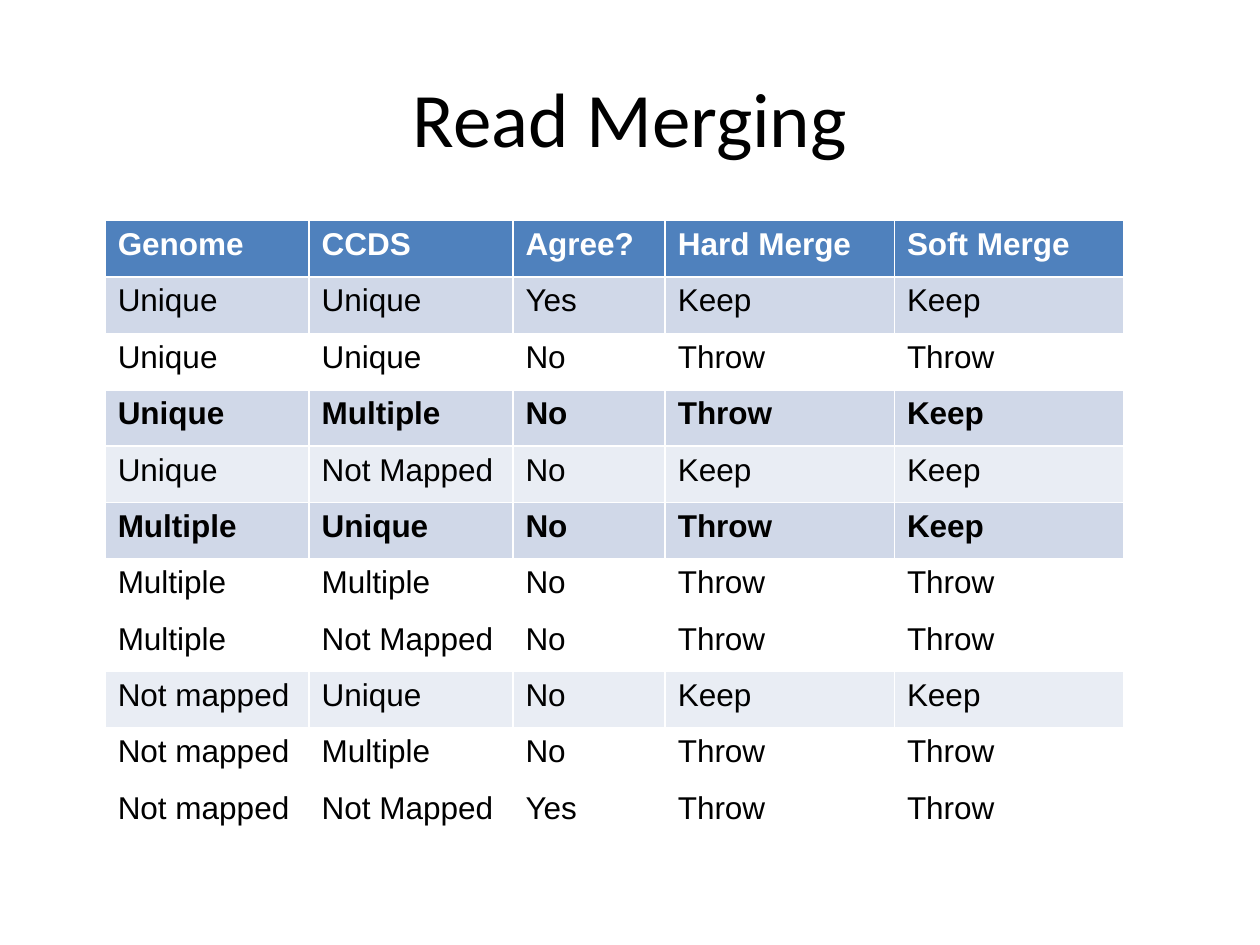
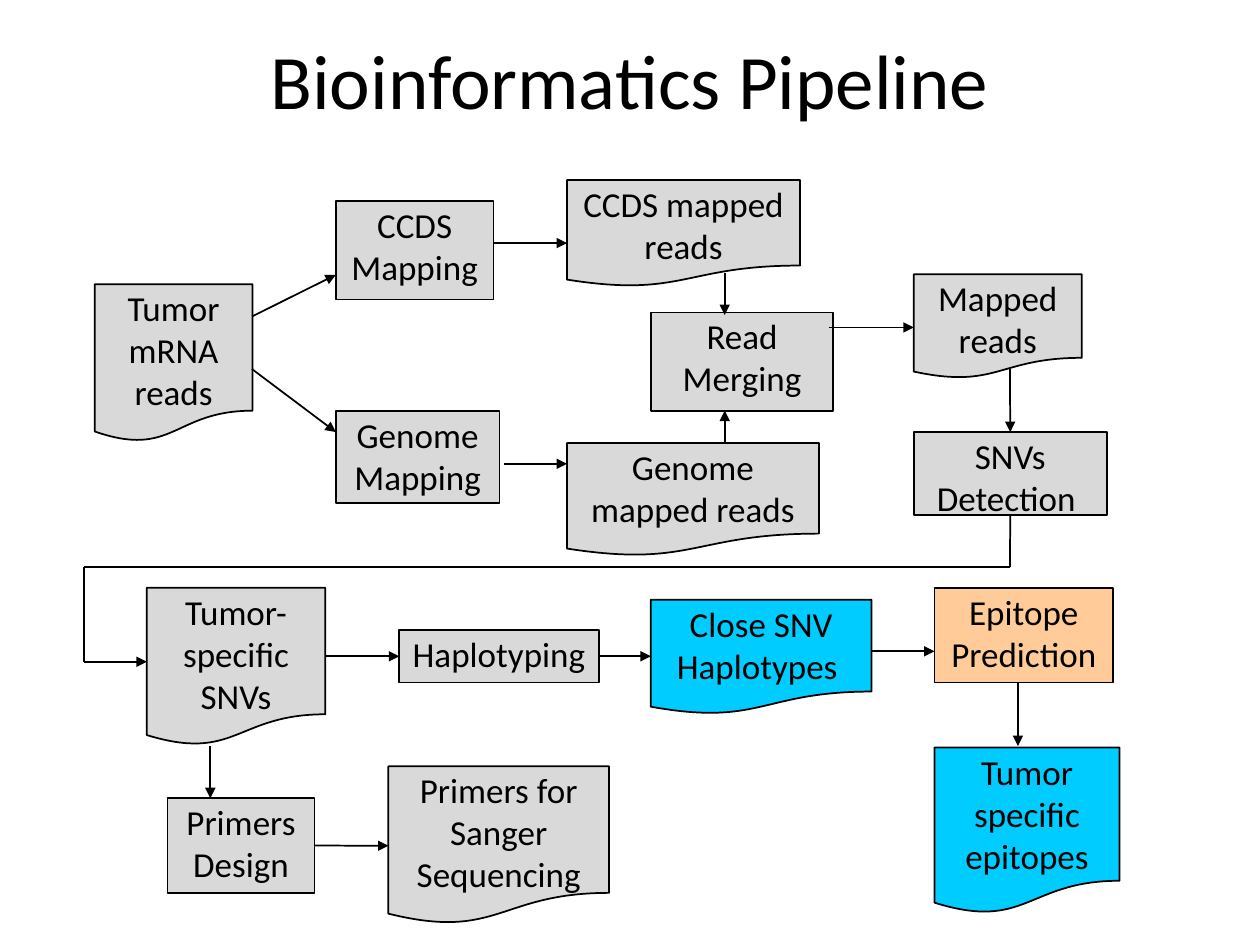
from lxml import etree
from pptx import Presentation
from pptx.dml.color import RGBColor
from pptx.enum.shapes import MSO_CONNECTOR, MSO_SHAPE
from pptx.enum.text import MSO_ANCHOR, PP_ALIGN
from pptx.oxml.ns import qn
from pptx.util import Cm, Pt

COLORS = {
    "text": "000000", "white": "FFFFFF", "header": "4F81BD",
    "band": "D0D8E8", "light": "E9EDF4",
    "step": "D9D9D9", "result": "00CCFF", "prediction": "FFCC99",
}
TITLE_FONT = "Calibri"
TABLE_FONT = "Arial"


def style_paragraph(paragraph, font, size, color="text", bold=False):
    paragraph.font.name = font
    paragraph.font.size = Pt(size)
    paragraph.font.bold = bold
    paragraph.font.color.rgb = RGBColor.from_string(COLORS[color])


def add_titled_slide(title, top):
    slide = prs.slides.add_slide(prs.slide_layouts[6])
    heading = slide.shapes.add_textbox(Cm(1.27), Cm(top), Cm(22.86), Cm(3.18)).text_frame
    heading.word_wrap = True
    heading.vertical_anchor = MSO_ANCHOR.MIDDLE
    heading.text = title
    heading.paragraphs[0].alignment = PP_ALIGN.CENTER
    style_paragraph(heading.paragraphs[0], TITLE_FONT, 44)
    return slide


prs = Presentation()
prs.slide_width, prs.slide_height = Cm(25.4), Cm(19.05)

# Slide 1: merge rules, each row with its fill and whether it is bold
merging = add_titled_slide("Read Merging", 0.76)
rules = [
    ("header", True, ["Genome", "CCDS", "Agree?", "Hard Merge", "Soft Merge"]),
    ("band", False, ["Unique", "Unique", "Yes", "Keep", "Keep"]),
    ("white", False, ["Unique", "Unique", "No", "Throw", "Throw"]),
    ("band", True, ["Unique", "Multiple", "No", "Throw", "Keep"]),
    ("light", False, ["Unique", "Not Mapped", "No", "Keep", "Keep"]),
    ("band", True, ["Multiple", "Unique", "No", "Throw", "Keep"]),
    ("white", False, ["Multiple", "Multiple", "No", "Throw", "Throw"]),
    ("white", False, ["Multiple", "Not Mapped", "No", "Throw", "Throw"]),
    ("light", False, ["Not mapped", "Unique", "No", "Keep", "Keep"]),
    ("white", False, ["Not mapped", "Multiple", "No", "Throw", "Throw"]),
    ("white", False, ["Not mapped", "Not Mapped", "Yes", "Throw", "Throw"]),
]
widths = [4.11, 4.11, 3.07, 4.62, 4.62]
rule_table = merging.shapes.add_table(
    len(rules), len(widths), Cm(2.12), Cm(4.45), Cm(sum(widths)), Cm(12.5)).table
for column, width in zip(rule_table.columns, widths):
    column.width = Cm(width)
for row, (fill, bold, words) in zip(rule_table.rows, rules):
    for cell, word in zip(row.cells, words):
        cell.text = word
        cell.fill.solid()
        cell.fill.fore_color.rgb = RGBColor.from_string(COLORS[fill])
        style_paragraph(cell.text_frame.paragraphs[0], TABLE_FONT, 18,
                        "white" if fill == "header" else "text", bold)

# Slide 2: processes are rectangles, data are document shapes
pipeline = add_titled_slide("Bioinformatics Pipeline", 0)
PROCESS, DATA = MSO_SHAPE.FLOWCHART_PROCESS, MSO_SHAPE.FLOWCHART_DOCUMENT
stages = [
    ("Tumor mRNA reads", DATA, "step", 1.91, 5.73, 3.18, 3.18),
    ("CCDS\nMapping", PROCESS, "step", 6.77, 4.06, 3.18, 1.98),
    ("Genome Mapping", PROCESS, "step", 6.77, 8.28, 3.3, 1.86),
    ("Read Merging", PROCESS, "step", 13.12, 6.3, 3.68, 1.98),
    ("CCDS mapped reads", DATA, "step", 11.43, 3.63, 4.7, 2.15),
    ("Genome mapped reads", DATA, "step", 11.43, 8.93, 5.08, 2.28),
    ("SNVs Detection ", PROCESS, "step", 18.42, 8.71, 3.89, 1.68),
    ("Mapped reads", DATA, "step", 18.42, 5.53, 3.39, 2.1),
    ("Epitope Prediction", PROCESS, "prediction", 18.84, 11.85, 3.6, 1.91),
    ("Tumor specific epitopes", DATA, "result", 18.84, 15.07, 3.73, 3.35),
    ("Haplotyping", PROCESS, "step", 8.05, 12.7, 4.02, 1.06),
    ("Tumor-specific SNVs", DATA, "step", 2.96, 11.85, 3.6, 3.18),
    ("Close SNV Haplotypes ", DATA, "result", 13.12, 12.09, 4.45, 2.31),
    ("Primers Design", PROCESS, "step", 3.38, 16.09, 2.96, 1.91),
    ("Primers for Sanger Sequencing", DATA, "step", 7.83, 15.45, 4.45, 3.18),
]
boxes = {}
for label, kind, fill, left, top, width, height in stages:
    box = pipeline.shapes.add_shape(kind, Cm(left), Cm(top), Cm(width), Cm(height))
    boxes[label.strip()] = box
    box.shadow.inherit = False
    box.fill.solid()
    box.fill.fore_color.rgb = RGBColor.from_string(COLORS[fill])
    box.line.color.rgb = RGBColor.from_string(COLORS["text"])
    box.line.width = Pt(1)
    frame = box.text_frame
    frame.word_wrap = True
    frame.vertical_anchor = MSO_ANCHOR.TOP
    frame.margin_left = frame.margin_right = Cm(0.1)
    frame.margin_top = frame.margin_bottom = Cm(0.05)
    frame.text = label
    for paragraph in frame.paragraphs:
        paragraph.alignment = PP_ALIGN.CENTER
        style_paragraph(paragraph, TITLE_FONT, 20)

# Flow: start, end, arrowhead, joined start and joined end (box, side)
TOP, LEFT, BOTTOM, RIGHT = range(4)
flows = [
    (5.08, 6.38, 6.77, 5.54, True, None, None),
    (5.08, 7.44, 6.77, 8.71, True, None, None),
    (9.95, 4.9, 11.43, 4.9, True, None, None),
    (10.16, 9.35, 11.43, 9.35, True, None, None),
    (14.61, 8.94, 14.61, 8.28, True, None, None),
    (14.61, 5.51, 14.61, 6.35, True, None, None),
    (16.71, 6.6, 18.42, 6.6, True, None, None),
    (20.36, 7.44, 20.36, 8.71, True, None, ("SNVs Detection", TOP)),
    (20.36, 10.39, 20.36, 11.43, False, ("SNVs Detection", BOTTOM), None),
    (1.7, 11.43, 20.36, 11.43, False, None, None),
    (1.7, 11.43, 1.7, 13.34, False, None, None),
    (1.7, 13.34, 2.96, 13.34, True, None, None),
    (6.56, 13.23, 8.05, 13.23, True, None, ("Haplotyping", LEFT)),
    (12.07, 13.23, 13.12, 13.23, True, ("Haplotyping", RIGHT), None),
    (17.58, 13.13, 18.84, 13.13, True, None, None),
    (20.52, 13.77, 20.52, 15.04, True, None, None),
    (4.24, 15.04, 4.24, 16.09, True, None, None),
    (6.34, 17.05, 7.83, 17.05, True, ("Primers Design", RIGHT), None),
]
for x1, y1, x2, y2, has_head, start, end in flows:
    flow = pipeline.shapes.add_connector(
        MSO_CONNECTOR.STRAIGHT, Cm(x1), Cm(y1), Cm(x2), Cm(y2))
    if start:
        flow.begin_connect(boxes[start[0]], start[1])
    if end:
        flow.end_connect(boxes[end[0]], end[1])
    flow.line.color.rgb = RGBColor.from_string(COLORS["text"])
    flow.line.width = Pt(1)
    if has_head:
        etree.SubElement(flow.line._get_or_add_ln(), qn("a:tailEnd"), type="triangle")
    etree.SubElement(flow._element.spPr, qn("a:effectLst"))

prs.save("out.pptx")
